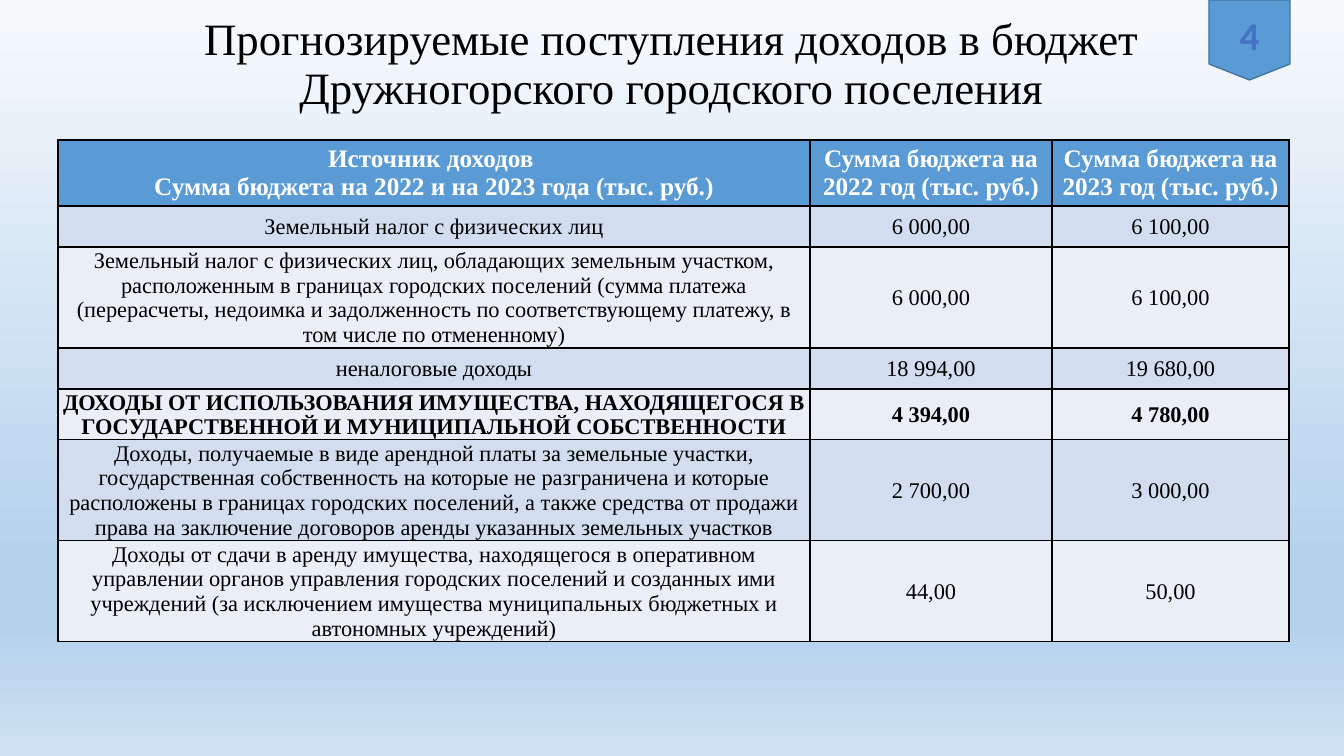
from dataclasses import dataclass

from lxml.etree import SubElement
from pptx import Presentation
from pptx.dml.color import RGBColor
from pptx.enum.shapes import MSO_SHAPE as Preset
from pptx.enum.text import MSO_ANCHOR as Anchor, MSO_AUTO_SIZE as AutoSize, PP_ALIGN as Align
from pptx.oxml.ns import qn
from pptx.slide import Slide
from pptx.table import _Cell as Cell
from pptx.text.text import TextFrame
from pptx.util import Emu, Pt

SERIF = "Times New Roman"
BLACK, WHITE, BLUE = "000000", "FFFFFF", "5B9BD5"
BANDS = ("EAEFF7", "D2DEEF")
BACKGROUND_STOPS = ((0, "F7FAFD"), (74, "B5D2EC"), (83, "B5D2EC"), (100, "CEE1F2"))
COLUMN_WIDTHS = (752, 242, 237)


@dataclass
class IncomeRow:
    source: str
    year_2022: str
    year_2023: str
    height: int
    bold: bool = False


HEADER = IncomeRow(
    "Источник доходов \nСумма бюджета на 2022 и на 2023 года (тыс. руб.)",
    "Сумма бюджета на 2022 год (тыс. руб.)",
    "Сумма бюджета на 2023 год (тыс. руб.)", 66, True)
INCOME_ROWS = (
    IncomeRow("Земельный налог с физических лиц", "6 000,00", "6 100,00", 41),
    IncomeRow("Земельный налог с физических лиц, обладающих земельным участком, "
              "расположенным в границах городских поселений (сумма платежа "
              "(перерасчеты, недоимка и задолженность по соответствующему платежу, "
              "в том числе по отмененному)", "6 000,00", "6 100,00", 101),
    IncomeRow("неналоговые доходы", "18 994,00", "19 680,00", 41),
    IncomeRow("ДОХОДЫ ОТ ИСПОЛЬЗОВАНИЯ ИМУЩЕСТВА, НАХОДЯЩЕГОСЯ В ГОСУДАРСТВЕННОЙ "
              "И МУНИЦИПАЛЬНОЙ СОБСТВЕННОСТИ", "4 394,00", "4 780,00", 50, True),
    IncomeRow("Доходы, получаемые в виде арендной платы за земельные участки, "
              "государственная собственность на которые не разграничена и которые "
              "расположены в границах городских поселений, а также средства от "
              "продажи права на заключение договоров аренды указанных земельных "
              "участков", "2 700,00", "3 000,00", 101),
    IncomeRow("Доходы от сдачи в аренду имущества, находящегося в оперативном "
              "управлении органов управления городских поселений и созданных ими "
              "учреждений (за исключением имущества муниципальных бюджетных и "
              "автономных учреждений)", "44,00", "50,00", 101),
)


def px(length: int) -> Emu:
    return Emu(round(length * 12192000 / 1344))


def color(value: str) -> RGBColor:
    return RGBColor.from_string(value)


def format_text(frame: TextFrame, size: int, ink: str, bold: bool = False,
                font: str = SERIF, spacing: float = 1.0) -> None:
    for paragraph in frame.paragraphs:
        paragraph.alignment = Align.CENTER
        paragraph.line_spacing = spacing
        for run in paragraph.runs:
            run.font.name = font
            run.font.size = Pt(size)
            run.font.bold = bold
            run.font.color.rgb = color(ink)


def paint_background(slide: Slide) -> None:
    fill = slide.background.fill
    fill.gradient()
    fill.gradient_angle = 270
    stops = next(slide.element.iter(qn("a:gsLst")))
    for stop in list(stops):
        stops.remove(stop)
    for percent, value in BACKGROUND_STOPS:
        stop = SubElement(stops, qn("a:gs"), pos=str(percent * 1000))
        SubElement(stop, qn("a:srgbClr"), val=value)


def add_title(slide: Slide) -> None:
    title = slide.shapes.title
    title.left, title.top, title.width, title.height = px(92), px(0), px(1159), px(119)
    frame = title.text_frame
    frame.text = "Прогнозируемые поступления доходов в бюджет Дружногорского городского поселения"
    frame.word_wrap = True
    frame.auto_size = AutoSize.NONE
    frame.vertical_anchor = Anchor.BOTTOM
    format_text(frame, 32, BLACK, spacing=0.9)


def add_borders(cell: Cell) -> None:
    properties = cell._tc.get_or_add_tcPr()
    for index, side in enumerate(("a:lnL", "a:lnR", "a:lnT", "a:lnB")):
        line = properties.makeelement(qn(side), {"w": str(Pt(1))})
        fill = SubElement(line, qn("a:solidFill"))
        SubElement(fill, qn("a:srgbClr"), val=BLACK)
        properties.insert(index, line)


def fill_cell(cell: Cell, text: str, fill: str, is_header: bool, bold: bool) -> None:
    cell.text_frame.text = text
    cell.vertical_anchor = Anchor.MIDDLE
    if not is_header:
        cell.margin_left = cell.margin_right = cell.margin_top = px(1)
        cell.margin_bottom = px(0)
    cell.fill.solid()
    cell.fill.fore_color.rgb = color(fill)
    format_text(cell.text_frame, 18 if is_header else 16, WHITE if is_header else BLACK, bold)
    add_borders(cell)


def add_income_table(slide: Slide) -> None:
    rows = (HEADER, *INCOME_ROWS)
    table = slide.shapes.add_table(
        len(rows), len(COLUMN_WIDTHS), px(58), px(140),
        px(sum(COLUMN_WIDTHS)), px(sum(row.height for row in rows))).table
    for column, width in zip(table.columns, COLUMN_WIDTHS):
        column.width = px(width)
    for index, row in enumerate(rows):
        table.rows[index].height = px(row.height)
        fill = BANDS[index % 2] if index else BLUE
        for cell, text in zip(table.rows[index].cells, (row.source, row.year_2022, row.year_2023)):
            fill_cell(cell, text, fill, index == 0, row.bold)


def add_page_badge(slide: Slide) -> None:
    badge = slide.shapes.add_shape(Preset.FLOWCHART_OFFPAGE_CONNECTOR,
                                   px(1209), px(0), px(81), px(80))
    badge.shadow.inherit = False
    badge.fill.solid()
    badge.fill.fore_color.rgb = color(BLUE)
    badge.line.color.rgb = color("43739E")
    badge.line.width = Pt(1)
    frame = badge.text_frame
    frame.text = "4"
    frame.vertical_anchor = Anchor.MIDDLE
    frame.margin_top, frame.margin_bottom = px(5), px(0)
    format_text(frame, 28, "4472C4", True, "Calibri")


def main() -> None:
    presentation = Presentation()
    presentation.slide_width, presentation.slide_height = px(1344), px(756)
    slide = presentation.slides.add_slide(presentation.slide_layouts[5])
    paint_background(slide)
    add_title(slide)
    add_income_table(slide)
    add_page_badge(slide)
    presentation.save("out.pptx")


if __name__ == "__main__":
    main()
